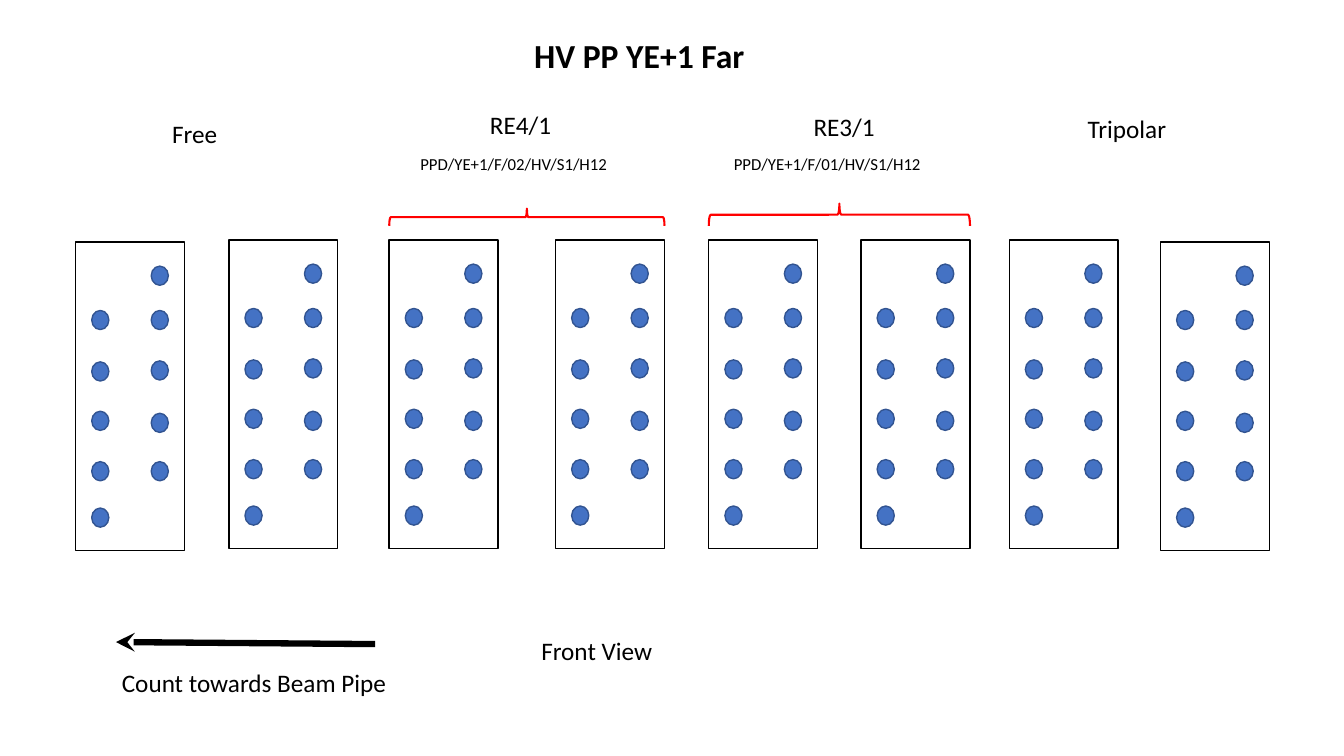
from lxml import etree
from pptx import Presentation
from pptx.dml.color import RGBColor
from pptx.enum.shapes import MSO_CONNECTOR, MSO_SHAPE
from pptx.enum.text import MSO_AUTO_SIZE
from pptx.oxml.ns import qn
from pptx.util import Inches, Pt

RECTANGLE, OVAL, BRACE = MSO_SHAPE.RECTANGLE, MSO_SHAPE.OVAL, MSO_SHAPE.LEFT_BRACE
STRAIGHT = MSO_CONNECTOR.STRAIGHT
FIT_SHAPE = MSO_AUTO_SIZE.SHAPE_TO_FIT_TEXT

BLACK = RGBColor(0x00, 0x00, 0x00)
RED = RGBColor(0xFF, 0x00, 0x00)
BLUE = RGBColor(0x44, 0x72, 0xC4)
DARK_BLUE = RGBColor(0x32, 0x54, 0x91)

SLIDE_SIZE = (13.33, 7.5)
PANEL_SIZE = (1.08, 3.06)
PIN_SIZE = (0.17, 0.19)

# left, top of each panel
PANELS = [(0.75, 2.4), (2.27, 2.38), (3.86, 2.38), (5.51, 2.38),
          (7.03, 2.38), (8.54, 2.38), (10.01, 2.38), (11.51, 2.4)]
# pin column offset in the panel: pin row offsets
PIN_COLUMNS = {0.16: (0.68, 1.19, 1.68, 2.18, 2.64),
               0.75: (0.24, 0.68, 1.18, 1.7, 2.18)}
# first panel, last panel, top, height
BRACES = [(2, 3, 2.07, 0.17), (4, 5, 2.02, 0.22)]
# text, left, top, width, height, size, bold, wrap
LABELS = [
    ("HV PP YE+1 Far", 5.2, 0.3, 3.02, 0.5, 24, True, True),
    ("Free", 1.61, 1.12, 1.57, 0.4, 18, False, True),
    ("RE4/1", 4.76, 1.04, 0.82, 0.4, 18, False, True),
    ("RE3/1", 7.97, 1.06, 0.82, 0.4, 18, False, True),
    ("Tripolar", 10.69, 1.08, 1.57, 0.4, 18, False, True),
    ("PPD/YE+1/F/02/HV/S1/H12", 4.07, 1.48, 2.4, 0.3, 12, False, True),
    ("PPD/YE+1/F/01/HV/S1/H12", 7.18, 1.48, 2.4, 0.3, 12, False, True),
    ("Front View", 5.27, 6.25, 1.31, 0.4, 18, False, False),
    ("Count towards Beam Pipe", 1.11, 6.57, 2.85, 0.4, 18, False, False),
]
ARROW = (3.72, 6.39, 1.15, 6.37)


def add_outline(shapes, kind, box, color, width=1, fill=None):
    shape = shapes.add_shape(kind, *map(Inches, box))
    shape.shadow.inherit = False
    shape.line.color.rgb = color
    shape.line.width = Pt(width)
    if fill is None:
        shape.fill.background()
    else:
        shape.fill.solid()
        shape.fill.fore_color.rgb = fill
    return shape


def add_panel(slide, left, top):
    shapes = slide.shapes.add_group_shape().shapes
    add_outline(shapes, RECTANGLE, (left, top, *PANEL_SIZE), BLACK)
    for column, rows in PIN_COLUMNS.items():
        for row in rows:
            box = (left + column, top + row, *PIN_SIZE)
            add_outline(shapes, OVAL, box, DARK_BLUE, fill=BLUE)


def add_brace(slide, first, last, top, height):
    """Span the panels with a left brace turned to point upwards."""
    left = PANELS[first][0]
    span = PANELS[last][0] + PANEL_SIZE[0] - left
    box = (left + (span - height) / 2, top + (height - span) / 2, height, span)
    add_outline(slide.shapes, BRACE, box, RED, 1.5).rotation = 90


def add_label(slide, text, left, top, width, height, size, bold, wrap):
    box = slide.shapes.add_textbox(*map(Inches, (left, top, width, height)))
    frame = box.text_frame
    frame.word_wrap = wrap
    frame.auto_size = FIT_SHAPE
    run = frame.paragraphs[0].add_run()
    run.text = text
    run.font.color.rgb = BLACK
    for name, value in {"name": "Calibri", "size": Pt(size), "bold": bold}.items():
        setattr(run.font, name, value)


def add_arrow(slide):
    arrow = slide.shapes.add_connector(STRAIGHT, *map(Inches, ARROW))
    arrow.line.color.rgb = BLACK
    arrow.line.width = Pt(4.5)
    etree.SubElement(arrow.line._get_or_add_ln(), qn("a:tailEnd"), type="stealth")
    etree.SubElement(arrow._element.spPr, qn("a:effectLst"))


def main():
    presentation = Presentation()
    presentation.slide_width, presentation.slide_height = map(Inches, SLIDE_SIZE)
    slide = presentation.slides.add_slide(presentation.slide_layouts[6])
    for panel in PANELS:
        add_panel(slide, *panel)
    for brace in BRACES:
        add_brace(slide, *brace)
    for label in LABELS:
        add_label(slide, *label)
    add_arrow(slide)
    presentation.save("out.pptx")


if __name__ == "__main__":
    main()
